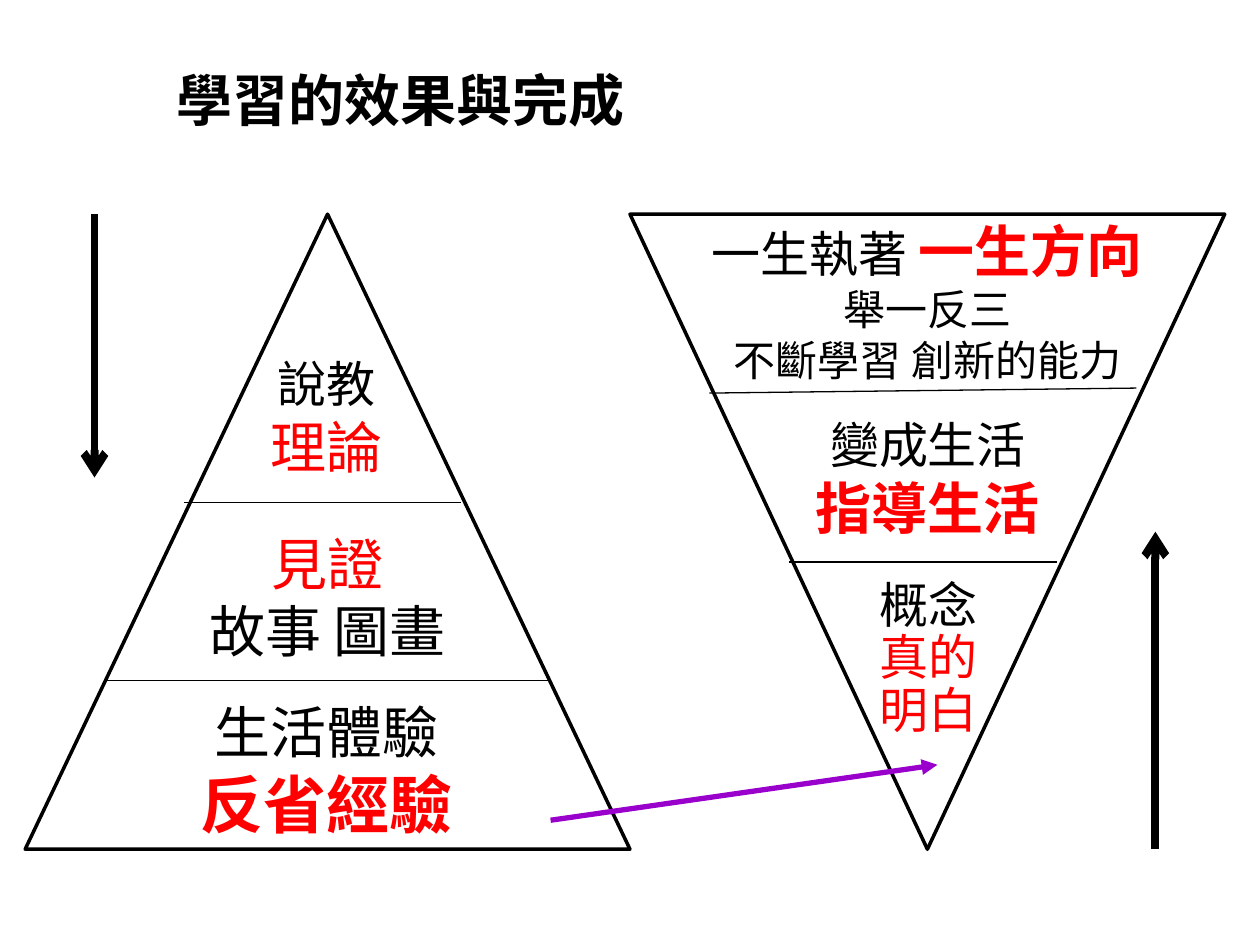
"""Build a slide with two facing learning triangles."""
from lxml import etree
from pptx import Presentation
from pptx.dml.color import RGBColor
from pptx.enum import shapes, text
from pptx.oxml.ns import qn
from pptx.util import Inches, Pt

BLACK, RED, PURPLE = "000000", "FF0000", "9900CC"
SANS, TITLE_FONT = "Noto Sans CJK SC", "Noto Sans CJK JP"


def color(value):
    return RGBColor.from_string(value)


def add_text(box, lines, font=SANS, alignment=text.PP_ALIGN.CENTER, spacing=None):
    textbox = slide.shapes.add_textbox(*[Inches(value) for value in box])
    frame = textbox.text_frame
    frame.word_wrap = True
    for index, runs in enumerate(lines):
        paragraph = frame.paragraphs[0] if index == 0 else frame.add_paragraph()
        paragraph.alignment = alignment
        largest = max(size for _, size, _, _ in runs)
        paragraph.line_spacing = Pt(spacing if spacing and index else largest * 1.2)
        for words, size, fill, bold in runs:
            run = paragraph.add_run()
            run.text = words
            run.font.size = Pt(size)
            run.font.bold = bold
            run.font.color.rgb = color(fill)
            run.font.name = font
            etree.SubElement(run.font._element, qn("a:ea"), typeface=font)


presentation = Presentation()
presentation.slide_width, presentation.slide_height = Inches(10), Inches(7.5)
slide = presentation.slides.add_slide(presentation.slide_layouts[6])

add_text((1.3, 0.47, 5, 0.65), [[("學習的效果與完成", 32, BLACK, True)]],
         TITLE_FONT, text.PP_ALIGN.LEFT)

for left, width, rotation in [(0.2, 4.8, 0), (5, 4.72, 180)]:
    triangle = slide.shapes.add_shape(
        shapes.MSO_SHAPE.ISOSCELES_TRIANGLE,
        Inches(left), Inches(1.7), Inches(width), Inches(5.04))
    triangle.rotation = rotation
    triangle.shadow.inherit = False
    triangle.fill.background()
    triangle.line.color.rgb = color(BLACK)
    triangle.line.width = Pt(2)

text_blocks = [
    ((2.04, 2.76, 1.1, 1.11), None,
     [[("說教", 28, BLACK, False)], [("理論", 32, RED, False)]]),
    ((1.22, 4.15, 2.76, 1.18), None,
     [[("見證", 32, RED, False)], [("故事 圖畫", 32, BLACK, False)]]),
    ((1.06, 5.49, 3.07, 1.25), None,
     [[("生活體驗", 32, BLACK, False)], [("反省經驗", 36, RED, True)]]),
    ((5, 1.67, 4.72, 1.45), None,
     [[("一生執著 ", 28, BLACK, False), ("一生方向", 32, RED, True)],
      [("舉一反三", 24, BLACK, False)],
      [("不斷學習 創新的能力", 24, BLACK, False)]]),
    ((6.19, 3.24, 2.35, 1.11), None,
     [[("變成生活", 28, BLACK, False)], [("指導生活", 32, RED, True)]]),
    ((6.7, 4.51, 1.34, 1.41), 30,
     [[("概念", 28, BLACK, False)], [("真的", 28, RED, False)],
      [("明白", 28, RED, False)]]),
]
for box, spacing, lines in text_blocks:
    add_text(box, lines, spacing=spacing)

connectors = [
    ((1.46, 3.99, 3.66, 3.99), BLACK, 0.75, None),
    ((0.83, 5.4, 4.37, 5.4), BLACK, 0.75, None),
    ((5.63, 3.12, 9.02, 3.08), BLACK, 0.75, None),
    ((6.26, 4.46, 8.39, 4.46), BLACK, 0.75, None),
    ((0.75, 1.7, 0.75, 3.79), BLACK, 4.5, "arrow"),
    ((9.17, 6.74, 9.17, 4.22), BLACK, 4.5, "arrow"),
    ((4.37, 6.51, 7.44, 6.07), PURPLE, 3, "triangle"),
]
for ends, stroke, width, arrowhead in connectors:
    connector = slide.shapes.add_connector(
        shapes.MSO_CONNECTOR.STRAIGHT, *[Inches(value) for value in ends])
    connector.line.color.rgb = color(stroke)
    connector.line.width = Pt(width)
    if arrowhead:
        etree.SubElement(connector.line._get_or_add_ln(), qn("a:tailEnd"), type=arrowhead)
    etree.SubElement(connector._element.spPr, qn("a:effectLst"))

presentation.save("out.pptx")
